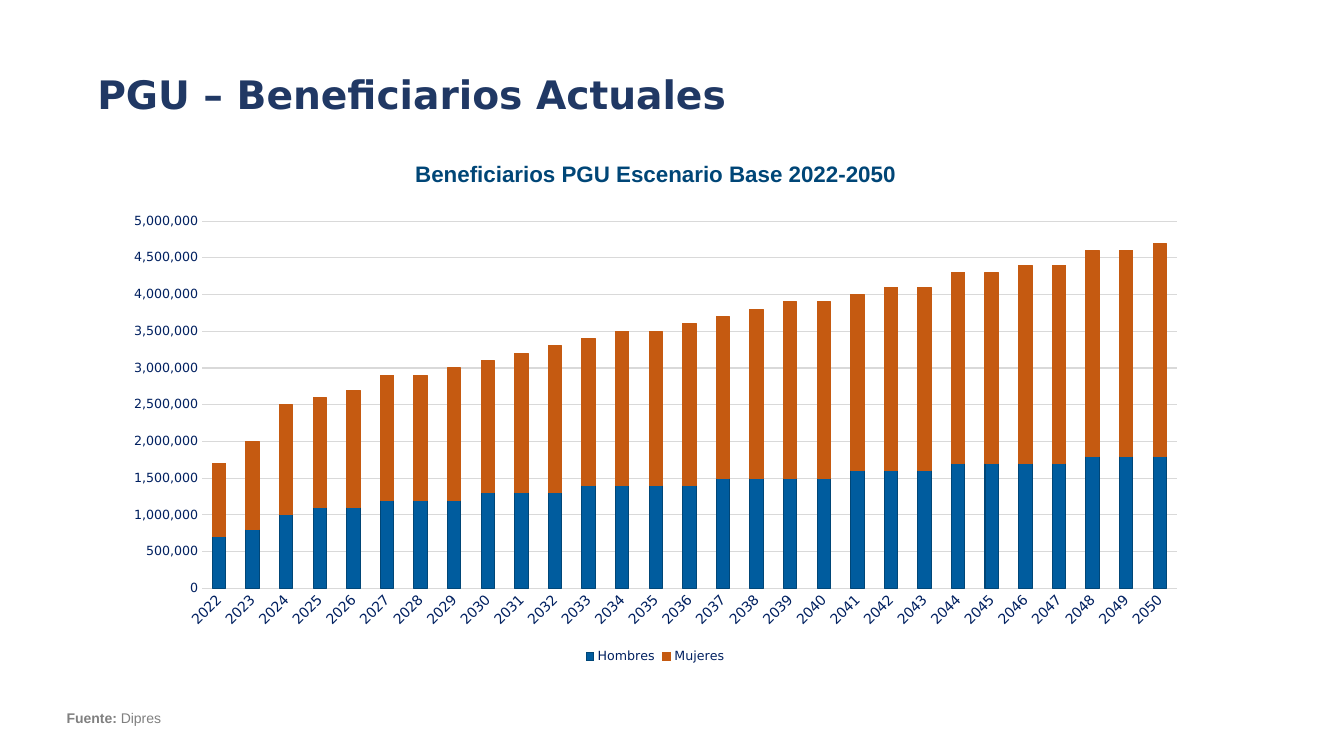
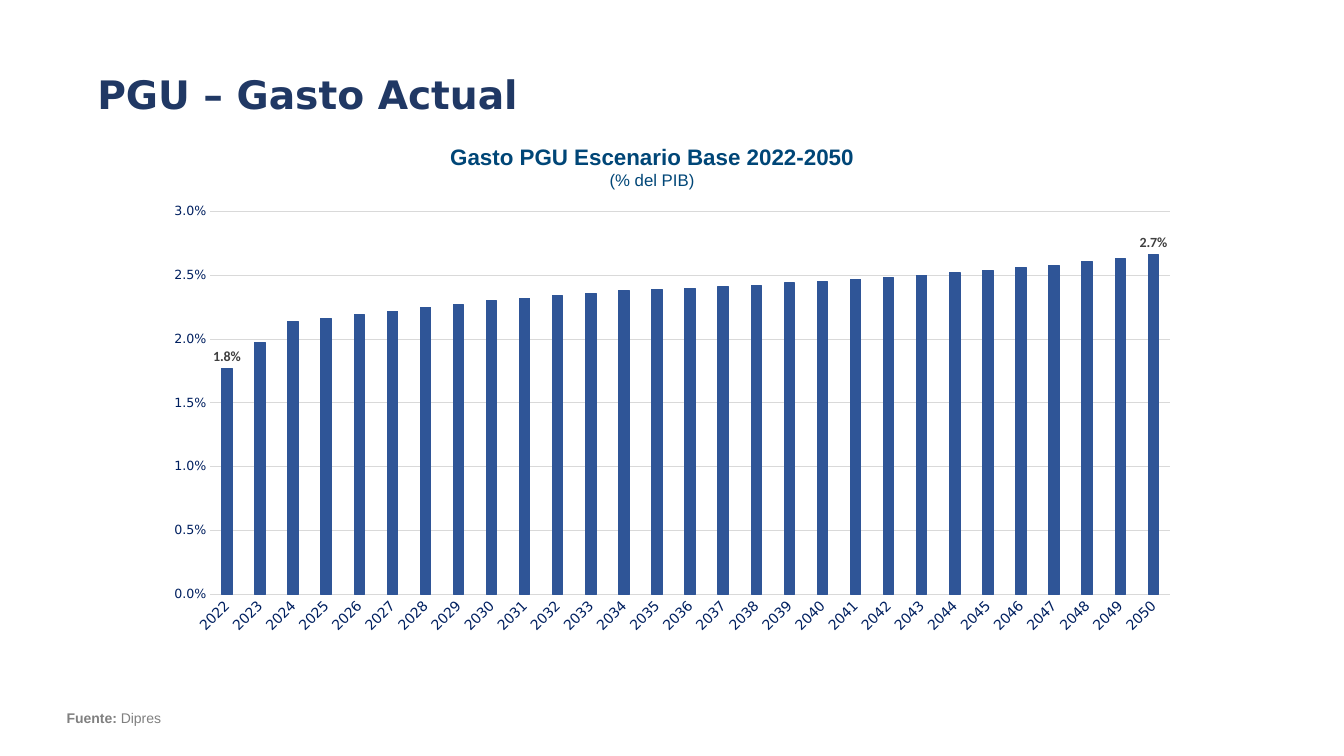
from dataclasses import dataclass

from lxml import etree
from pptx import Presentation
from pptx.chart.data import CategoryChartData
from pptx.dml.color import RGBColor
from pptx.enum.chart import XL_CHART_TYPE as ChartType
from pptx.enum.chart import XL_LABEL_POSITION as LabelPosition
from pptx.enum.chart import XL_LEGEND_POSITION as LegendPosition
from pptx.enum.chart import XL_TICK_MARK as TickMark
from pptx.enum.text import MSO_ANCHOR as Anchor
from pptx.enum.text import PP_ALIGN as Align
from pptx.oxml.ns import qn
from pptx.util import Pt


@dataclass(frozen=True)
class Theme:
    title: str = "203864"
    heading: str = "004677"
    source: str = "808080"
    axis: str = "002060"
    grid: str = "D9D9D9"
    label: str = "404040"
    men: str = "005C9E"
    women: str = "C55A11"
    spending: str = "2F5597"
    title_font: str = "DejaVu Sans"
    text_font: str = "Arial"
    label_font: str = "Calibri"
    title_size: int = 28
    heading_size: int = 16
    subheading_size: int = 12
    small_size: int = 10
    axis_size: int = 9
    hairline: float = 0.75


THEME = Theme()
YEARS = [str(year) for year in range(2022, 2051)]

MEN = [0.7, 0.8, 1.0, 1.1, 1.1, 1.2, 1.2, 1.2, 1.3, 1.3,
       1.3, 1.4, 1.4, 1.4, 1.4, 1.5, 1.5, 1.5, 1.5, 1.6,
       1.6, 1.6, 1.7, 1.7, 1.7, 1.7, 1.8, 1.8, 1.8]
WOMEN = [1.0, 1.2, 1.5, 1.5, 1.6, 1.7, 1.7, 1.8, 1.8, 1.9,
         2.0, 2.0, 2.1, 2.1, 2.2, 2.2, 2.3, 2.4, 2.4, 2.4,
         2.5, 2.5, 2.6, 2.6, 2.7, 2.7, 2.8, 2.8, 2.9]
SPENDING = [1.77, 1.97, 2.14, 2.16, 2.19, 2.22, 2.25, 2.27, 2.30, 2.32,
            2.34, 2.36, 2.38, 2.39, 2.40, 2.41, 2.42, 2.44, 2.45, 2.47,
            2.48, 2.50, 2.52, 2.54, 2.56, 2.58, 2.61, 2.63, 2.66]


def millions(values):
    return [round(value * 1_000_000) for value in values]


def percents(values):
    return [round(value / 100, 4) for value in values]


# Boxes are left, top, width, height in points; plot areas are shares of the chart.
TITLE_BOX = (65, 44.8, 828, 49)
SOURCE_BOX = (40.5, 503.5, 626.5, 19.5)
SLIDES = [
    dict(
        title="PGU – Beneficiarios Actuales",
        heading=["Beneficiarios PGU Escenario Base 2022-2050"],
        heading_box=(193.5, 111, 549.5, 26.5),
        chart=dict(
            kind=ChartType.COLUMN_STACKED, box=(80, 146, 776, 331),
            plot=(0.083, 0.036, 0.897, 0.793),
            series=[("Hombres", millions(MEN), THEME.men, THEME.heading),
                    ("Mujeres", millions(WOMEN), THEME.women, THEME.women)],
            number_format="#,##0", top=5_000_000, step=500_000,
            gap=150, overlap=100, legend=True, labelled=[]),
    ),
    dict(
        title="PGU – Gasto Actual",
        heading=["Gasto PGU Escenario Base 2022-2050", "(% del PIB)"],
        heading_box=(191, 98.5, 549.5, 41),
        chart=dict(
            kind=ChartType.COLUMN_CLUSTERED, box=(109.5, 140, 741, 319),
            plot=(0.055, 0.035, 0.925, 0.857),
            series=[("Series 1", percents(SPENDING), THEME.spending, THEME.spending)],
            number_format="0.0%", top=0.03, step=0.005,
            gap=219, overlap=-27, legend=False, labelled=[0, len(YEARS) - 1]),
    ),
]


def color(value):
    return RGBColor.from_string(value)


def set_font(font, size, fill, name=THEME.title_font, bold=False):
    font.name, font.size, font.bold = name, Pt(size), bold
    font.color.rgb = color(fill)


def set_line(line, fill):
    line.color.rgb = color(fill)
    line.width = Pt(THEME.hairline)


def add_text(page, bounds, paragraphs, *, fill, font=THEME.text_font,
             align=Align.LEFT, anchor=Anchor.TOP, inset=None, spacing=None):
    """Each paragraph is a list of (text, size, bold) runs."""
    box = page.shapes.add_textbox(*map(Pt, bounds))
    frame = box.text_frame
    frame.word_wrap = True
    frame.vertical_anchor = anchor
    if inset is not None:
        frame.margin_left = frame.margin_right = Pt(inset)
        frame.margin_top = frame.margin_bottom = Pt(inset)
    for index, runs in enumerate(paragraphs):
        para = frame.add_paragraph() if index else frame.paragraphs[0]
        para.alignment = align
        para.line_spacing = spacing
        for text, size, bold in runs:
            span = para.add_run()
            span.text = text
            set_font(span.font, size, fill, font, bold)


def place_plot(chart, shares):
    """Fix the inner plot area inside the chart."""
    area = chart._chartSpace.chart.plotArea
    for old in area.findall(qn("c:layout")):
        area.remove(old)
    layout = etree.Element(qn("c:layout"))
    manual = etree.SubElement(layout, qn("c:manualLayout"))
    settings = [("layoutTarget", "inner"), ("xMode", "edge"), ("yMode", "edge"),
                *zip("xywh", shares)]
    for tag, value in settings:
        etree.SubElement(manual, qn(f"c:{tag}")).set("val", str(value))
    area.insert(0, layout)


def style_axes(chart, number_format, top, step):
    years, values = chart.category_axis, chart.value_axis
    for axis, size in ((years, THEME.small_size), (values, THEME.axis_size)):
        axis.major_tick_mark = axis.minor_tick_mark = TickMark.NONE
        set_font(axis.tick_labels.font, size, THEME.axis)
    set_line(years.format.line, THEME.grid)
    years._element.find(qn("c:txPr")).find(qn("a:bodyPr")).set("rot", "-2700000")
    values.minimum_scale, values.maximum_scale = 0, top
    values.major_unit = step
    values.format.line.fill.background()
    values.has_major_gridlines = True
    set_line(values.major_gridlines.format.line, THEME.grid)
    values.tick_labels.number_format = number_format
    values.tick_labels.number_format_is_linked = False


def label_points(series, indexes):
    for index in indexes:
        label = series.points[index].data_label
        set_font(label.font, THEME.small_size, THEME.label, THEME.label_font, True)
        label.position = LabelPosition.OUTSIDE_END
    if indexes:
        series.data_labels.show_value = False


def add_columns(page, *, kind, box, plot, series, number_format, top, step,
                gap, overlap, legend, labelled):
    data = CategoryChartData(number_format=number_format)
    data.categories = YEARS
    for name, values, *_ in series:
        data.add_series(name, values)
    chart = page.shapes.add_chart(kind, *map(Pt, box), data).chart
    chart.has_title = False
    set_font(chart.font, THEME.small_size, THEME.axis)
    place_plot(chart, plot)
    style_axes(chart, number_format, top, step)
    columns = chart.plots[0]
    columns.vary_by_categories = False
    columns.gap_width, columns.overlap = gap, overlap
    for bars, (_, _, fill, outline) in zip(columns.series, series):
        bars.format.fill.solid()
        bars.format.fill.fore_color.rgb = color(fill)
        set_line(bars.format.line, outline)
        label_points(bars, labelled)
    chart.has_legend = legend
    if legend:
        chart.legend.position = LegendPosition.BOTTOM
        chart.legend.include_in_layout = False
        set_font(chart.legend.font, THEME.axis_size, THEME.axis)


def add_page(deck, content):
    page = deck.slides.add_slide(deck.slide_layouts[6])
    add_text(page, TITLE_BOX, [[(content["title"], THEME.title_size, True)]],
             fill=THEME.title, font=THEME.title_font, anchor=Anchor.MIDDLE,
             inset=4.5, spacing=0.9)
    styles = [(THEME.heading_size, True), (THEME.subheading_size, False)]
    add_text(page, content["heading_box"],
             [[(text, *style)] for text, style in zip(content["heading"], styles)],
             fill=THEME.heading, align=Align.CENTER)
    add_columns(page, **content["chart"])
    add_text(page, SOURCE_BOX, [[("Fuente: ", THEME.small_size, True),
                                 ("Dipres", THEME.small_size, False)]],
             fill=THEME.source)


def main():
    deck = Presentation()
    deck.slide_width, deck.slide_height = Pt(960), Pt(540)
    for content in SLIDES:
        add_page(deck, content)
    deck.save("out.pptx")


if __name__ == "__main__":
    main()
